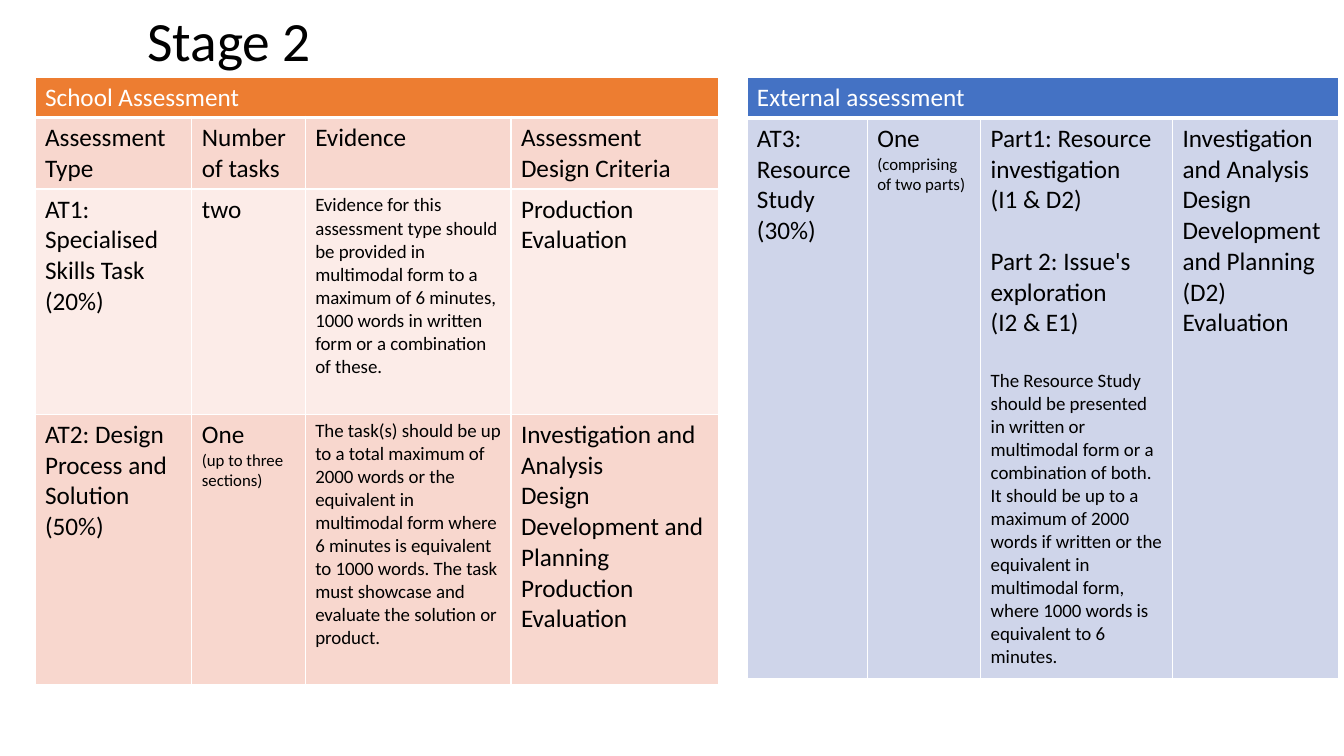
from dataclasses import dataclass

from lxml import etree
from pptx import Presentation
from pptx import util as u
from pptx.dml.color import RGBColor
from pptx.enum import text
from pptx.oxml import ns

FONT = "Calibri"
WHITE, BLACK = "FFFFFF", "000000"
BIG, MID, SMALL = 18, 13.5, 12
GAP = 22  # one line of the big size


@dataclass
class Run:
    words: str
    size: float = BIG


@dataclass
class Para:
    runs: list[Run]
    before: float = 0


@dataclass
class Grid:
    left: float
    top: float
    cols: list[float]
    rows: list[float]
    title: str
    head: str
    fills: list[str]
    body: list[list[list[Para]]]


def paint(code: str) -> RGBColor:
    return RGBColor.from_string(code)


def lines(*words: str, size: float = BIG) -> list[Para]:
    return [Para([Run(word, size)]) for word in words]


def write(frame, paras: list[Para], color: str) -> None:
    for i, para in enumerate(paras):
        p = frame.paragraphs[0] if i == 0 else frame.add_paragraph()
        if para.before:
            p.space_before = u.Pt(para.before)
        for run in para.runs:
            for j, part in enumerate(run.words.split("\n")):
                if j:
                    p.add_line_break()
                r = p.add_run()
                r.text = part
                r.font.name = FONT
                r.font.size = u.Pt(run.size)
                r.font.color.rgb = paint(color)


def style(cell, fill: str, top: float, base: float) -> None:
    cell.fill.solid()
    cell.fill.fore_color.rgb = paint(fill)
    props = cell._tc.get_or_add_tcPr()
    for i, (side, width) in enumerate(zip("LRTB", (1, 1, top, base))):
        edge = etree.Element(ns.qn(f"a:ln{side}"), w=str(u.Pt(width)))
        solid = etree.SubElement(edge, ns.qn("a:solidFill"))
        etree.SubElement(solid, ns.qn("a:srgbClr"), val=WHITE)
        props.insert(i, edge)


def draw_grid(slide, grid: Grid) -> None:
    frame = slide.shapes.add_table(
        len(grid.rows), len(grid.cols), u.Pt(grid.left), u.Pt(grid.top),
        u.Pt(sum(grid.cols)), u.Pt(sum(grid.rows)))
    table = frame.table
    table.first_row = table.horz_banding = False
    for col, width in zip(table.columns, grid.cols):
        col.width = u.Pt(width)
    for row, height in zip(table.rows, grid.rows):
        row.height = u.Pt(height)

    # Header across all columns
    table.cell(0, 0).merge(table.cell(0, len(grid.cols) - 1))
    for cell in table.rows[0].cells:
        style(cell, grid.head, 1, 3)
    write(table.cell(0, 0).text_frame, lines(grid.title), WHITE)

    # Body rows
    for r, (fill, row) in enumerate(zip(grid.fills, grid.body), 1):
        for c, paras in enumerate(row):
            cell = table.cell(r, c)
            style(cell, fill, 3 if r == 1 else 1, 1)
            write(cell.text_frame, paras, BLACK)


SCHOOL = Grid(
    25, 55, [112, 81, 147, 148], [29, 51, 161, 193],
    "School Assessment", "ED7D31", ["F8D7CE", "FCECE8", "F8D7CE"],
    [
        [lines("Assessment Type"), lines("Number of tasks"),
         lines("Evidence"), lines("Assessment Design Criteria")],
        [lines("AT1: Specialised Skills Task", "(20%)"),
         lines("two"),
         lines("Evidence for this assessment type should be provided in "
               "multimodal form to a maximum of 6 minutes, 1000 words in "
               "written form or a combination of these.", size=MID),
         lines("Production", "Evaluation")],
        [lines("AT2: Design Process and Solution", "(50%)"),
         lines("One") + lines("(up to three sections)", size=SMALL),
         lines("The task(s) should be up to a total maximum of 2000 words or "
               "the equivalent in multimodal form where 6 minutes is "
               "equivalent to 1000 words. The task must showcase and "
               "evaluate the solution or product.", size=MID),
         lines("Investigation and Analysis",
               "Design Development and Planning",
               "Production", "Evaluation")],
    ])

OUTER = Grid(
    533.5, 55.5, [86, 81, 137, 119], [29, 400],
    "External assessment", "4472C4", ["CFD5EA"],
    [
        [lines("AT3: Resource Study", "(30%)"),
         [Para([Run("One "), Run("(comprising of two parts)", SMALL)])],
         [Para([Run("Part1: Resource investigation\n(I1 & D2)")]),
          Para([Run("Part 2: Issue's exploration\n(I2 & E1)")], GAP),
          Para([Run("The Resource Study should be presented in written or "
                    "multimodal form or a combination of both. It should be "
                    "up to a maximum of 2000 words if written or the "
                    "equivalent in multimodal form, where 1000 words is "
                    "equivalent to 6 minutes.", MID)], GAP)],
         lines("Investigation and Analysis",
               "Design Development and Planning (D2)", "Evaluation")],
    ])


def main() -> None:
    deck = Presentation()
    deck.slide_width, deck.slide_height = u.Pt(960), u.Pt(540)
    slide = deck.slides.add_slide(deck.slide_layouts[6])

    # Title
    box = slide.shapes.add_textbox(u.Pt(98), u.Pt(6.5), u.Pt(171), u.Pt(49))
    frame = box.text_frame
    frame.word_wrap = True
    frame.vertical_anchor = text.MSO_ANCHOR.MIDDLE
    write(frame, lines("Stage 2", size=39.6), BLACK)
    frame.paragraphs[0].line_spacing = 0.9

    # Tables
    for grid in (SCHOOL, OUTER):
        draw_grid(slide, grid)

    deck.save("out.pptx")


if __name__ == "__main__":
    main()
